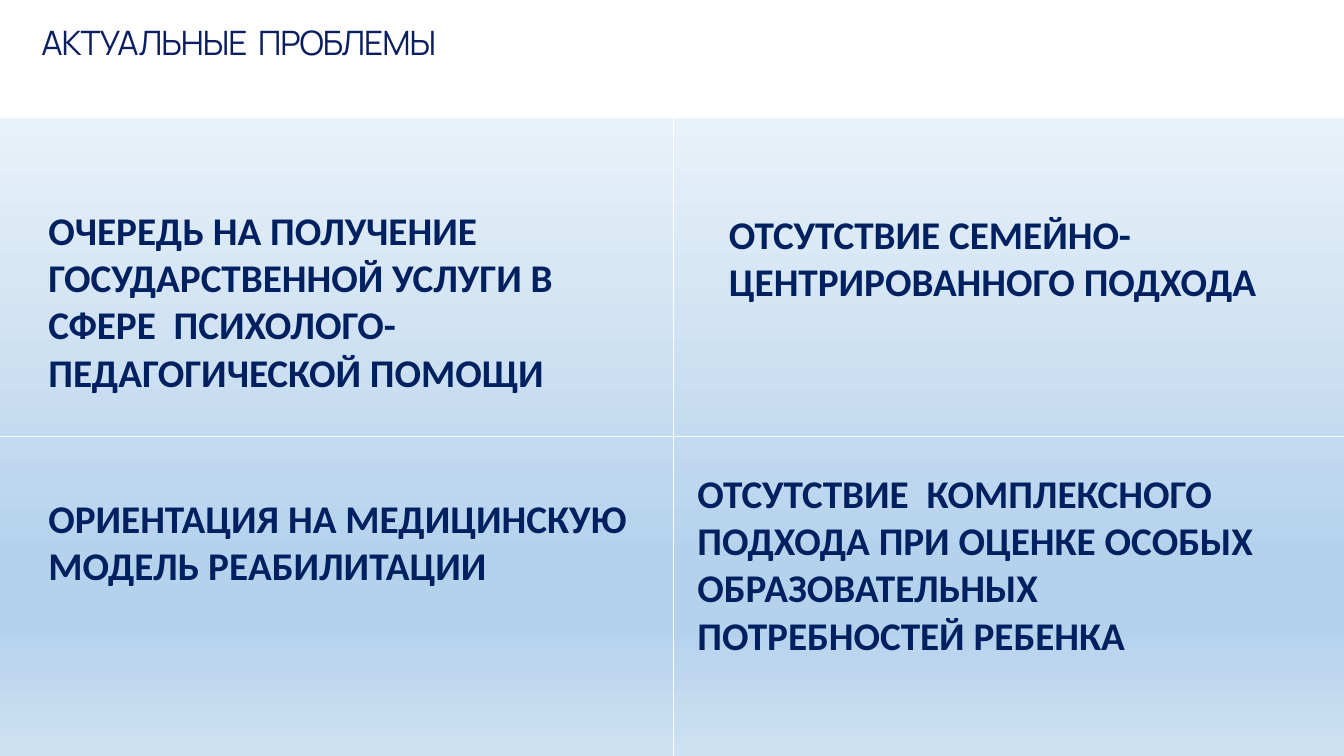
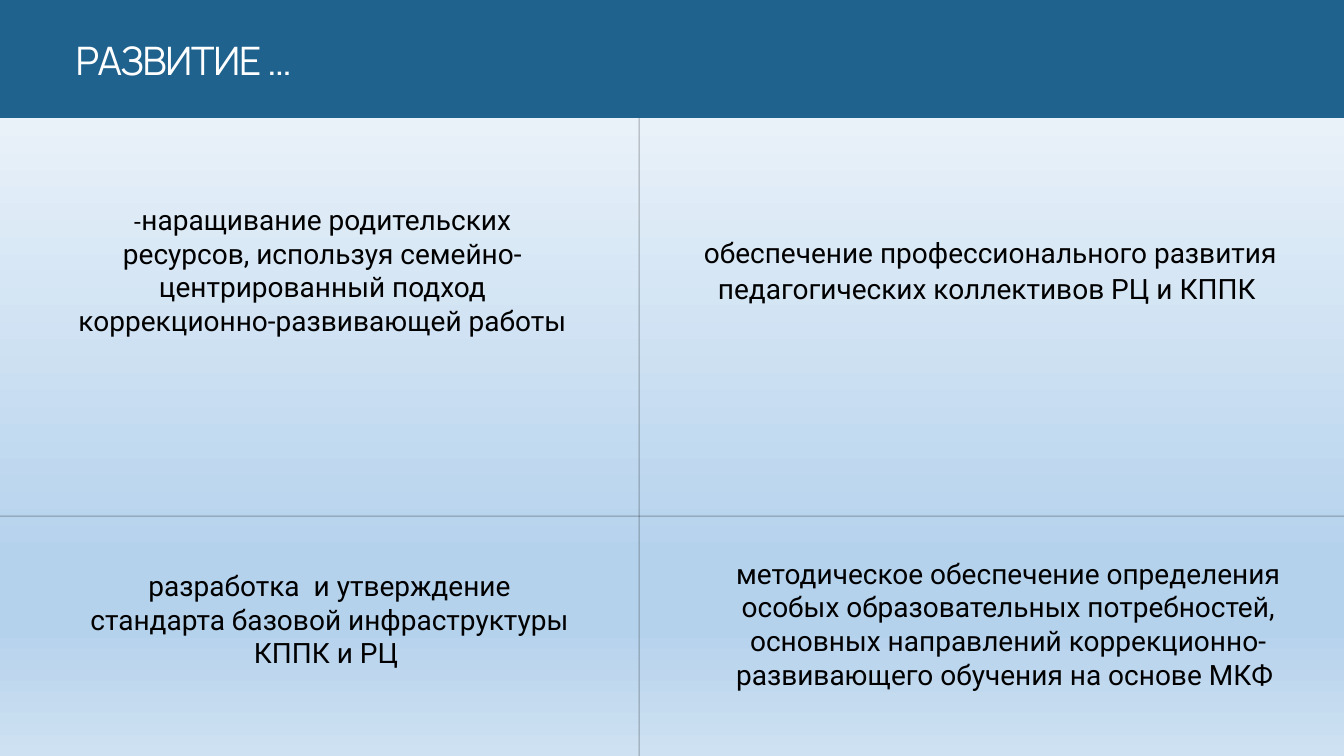
import pptx
import pptx.dml.color
import pptx.enum.dml
import pptx.enum.shapes
import pptx.enum.text
import pptx.oxml
import pptx.oxml.ns
import pptx.util
from collections import namedtuple
from lxml import etree

Font = namedtuple("Font", "name size color bold spacing", defaults=(False, 0))
LEFT = pptx.enum.text.PP_ALIGN.LEFT
CENTER = pptx.enum.text.PP_ALIGN.CENTER


def rgb(value):
    return pptx.dml.color.RGBColor.from_string(value)


def add_node(parent, tag, **attrs):
    return etree.SubElement(parent, pptx.oxml.ns.qn(tag), **attrs)


class Deck:
    BACKDROP = ((0, "F7FAFD"), (74, "B5D2EC"), (83, "B5D2EC"), (100, "CEE1F2"))
    BAND_HEIGHT = 15.6
    PROBLEM = Font("Calibri", 28, "002060", bold=True)
    GOAL = Font("Roboto", 20, "000000")
    DASH = Font("Calibri", 18, "000000")

    def __init__(self):
        self.prs = pptx.Presentation()
        self.prs.slide_width = pptx.util.Inches(13.33)
        self.prs.slide_height = pptx.util.Inches(7.5)
        self.slide = None

    def x(self, share):
        return round(self.prs.slide_width * share / 100)

    def y(self, share):
        return round(self.prs.slide_height * share / 100)

    def box(self, left, top, width, height):
        return self.x(left), self.y(top), self.x(width), self.y(height)

    def add_slide(self, split, line_color, band_color, opacity=100):
        self.slide = self.prs.slides.add_slide(self.prs.slide_layouts[6])
        self.backdrop()
        column, row = split
        self.line((0, row), (100, row), line_color, opacity)
        self.line((column, 0), (column, 100), line_color, opacity)
        self.band(band_color)

    def backdrop(self):
        fill = self.slide.background.fill
        fill.gradient()
        fill.gradient_angle = 270
        stops = self.slide.element.find(".//" + pptx.oxml.ns.qn("a:gsLst"))
        for stop in list(stops):
            stops.remove(stop)
        for position, color in self.BACKDROP:
            stop = add_node(stops, "a:gs", pos=str(position * 1000))
            add_node(stop, "a:srgbClr", val=color)

    def line(self, start, end, color, opacity):
        cn = self.slide.shapes.add_connector(
            pptx.enum.shapes.MSO_CONNECTOR.STRAIGHT,
            self.x(start[0]), self.y(start[1]), self.x(end[0]), self.y(end[1]))
        cn.line.width = pptx.util.Pt(0.75)
        cn.line.color.rgb = rgb(color)
        sp_pr = cn.element.spPr
        if opacity < 100:
            node = sp_pr.find(".//" + pptx.oxml.ns.qn("a:srgbClr"))
            add_node(node, "a:alpha", val=str(opacity * 1000))
        add_node(sp_pr, "a:effectLst")

    def band(self, color):
        sp = self.slide.shapes.add_shape(
            pptx.enum.shapes.MSO_SHAPE.RECTANGLE,
            *self.box(0, 0, 100, self.BAND_HEIGHT))
        sp.shadow.inherit = False
        sp.fill.solid()
        sp.fill.fore_color.rgb = rgb(color)
        sp.line.fill.background()

    def text(self, area, pieces, align=LEFT, spacing=None, inset=False):
        sp = self.slide.shapes.add_textbox(*self.box(*area))
        tf = sp.text_frame
        tf.word_wrap = True
        tf.auto_size = pptx.enum.text.MSO_AUTO_SIZE.SHAPE_TO_FIT_TEXT
        if not inset:
            tf.margin_left = tf.margin_right = 0
            tf.margin_top = tf.margin_bottom = 0
        p = tf.paragraphs[0]
        p.alignment = align
        if spacing:
            p.line_spacing = spacing
        for content, font in pieces:
            r = p.add_run()
            r.text = content
            self.style(r, font)

    def style(self, r, font):
        r.font.name = font.name
        r.font.size = pptx.util.Pt(font.size)
        r.font.bold = font.bold
        r.font.color.rgb = rgb(font.color)
        if font.spacing:
            r.font._element.set("spc", str(round(font.spacing * 100)))

    def title(self, area, content, size, color, spacing):
        font = Font("Manrope", size, color, spacing=spacing)
        self.text(area, [(content, font)], spacing=pptx.util.Pt(size * 1.3))

    def problem(self, area, content, inset=False):
        spacing = None if inset else pptx.util.Pt(33.8)
        self.text(area, [(content, self.PROBLEM)], spacing=spacing, inset=inset)

    def goal(self, area, content, prefix="", spacing=None, inset=False):
        pieces = [(prefix, self.DASH)] if prefix else []
        pieces.append((content, self.GOAL))
        self.text(area, pieces, CENTER, spacing, inset)

    def save(self):
        self.prs.save("out.pptx")


def problems(deck):
    deck.add_slide((50.1, 57.73), "FFFFFF", "FFFFFF")
    deck.title((3.08, 2.4, 79.3, 5.33), "АКТУАЛЬНЫЕ  ПРОБЛЕМЫ", 24, "0B1E60", -0.7)
    deck.problem((3.6, 27.2, 42.9, 25.2),
                 "ОЧЕРЕДЬ НА ПОЛУЧЕНИЕ  ГОСУДАРСТВЕННОЙ УСЛУГИ В СФЕРЕ  "
                 "ПСИХОЛОГО-ПЕДАГОГИЧЕСКОЙ ПОМОЩИ")
    deck.problem((53.5, 27.2, 43.2, 13.87),
                 "ОТСУТСТВИЕ СЕМЕЙНО-ЦЕНТРИРОВАННОГО ПОДХОДА", inset=True)
    deck.problem((3.6, 65.33, 44.33, 12.53),
                 "ОРИЕНТАЦИЯ НА МЕДИЦИНСКУЮ МОДЕЛЬ РЕАБИЛИТАЦИИ")
    deck.problem((51.9, 62, 42.1, 25.47),
                 "ОТСУТСТВИЕ  КОМПЛЕКСНОГО ПОДХОДА ПРИ ОЦЕНКЕ ОСОБЫХ "
                 "ОБРАЗОВАТЕЛЬНЫХ ПОТРЕБНОСТЕЙ РЕБЕНКА")


def development(deck):
    deck.add_slide((47.55, 68.27), "000000", "1F628E", opacity=30)
    deck.title((5.63, 4.27, 37, 6.27), "РАЗВИТИЕ …", 28, "FFFFFF", -0.8)
    deck.goal((5.4, 26.8, 37.2, 18),
              "наращивание родительских ресурсов, используя "
              "семейно-центрированный подход коррекционно-развивающей работы",
              prefix="-")
    deck.goal((51, 30.13, 45.4, 10.53),
              "обеспечение профессионального развития педагогических "
              "коллективов РЦ и КППК ", spacing=1.07, inset=True)
    deck.goal((6.45, 75.2, 36.15, 13.47),
              "разработка  и утверждение стандарта базовой инфраструктуры "
              "КППК и РЦ ")
    deck.goal((53.5, 72.93, 43.05, 19.33),
              "методическое обеспечение определения особых образовательных "
              "потребностей, основных направлений коррекционно-развивающего "
              "обучения на основе МКФ ", inset=True)


def main():
    deck = Deck()
    problems(deck)
    development(deck)
    deck.save()


if __name__ == "__main__":
    main()
